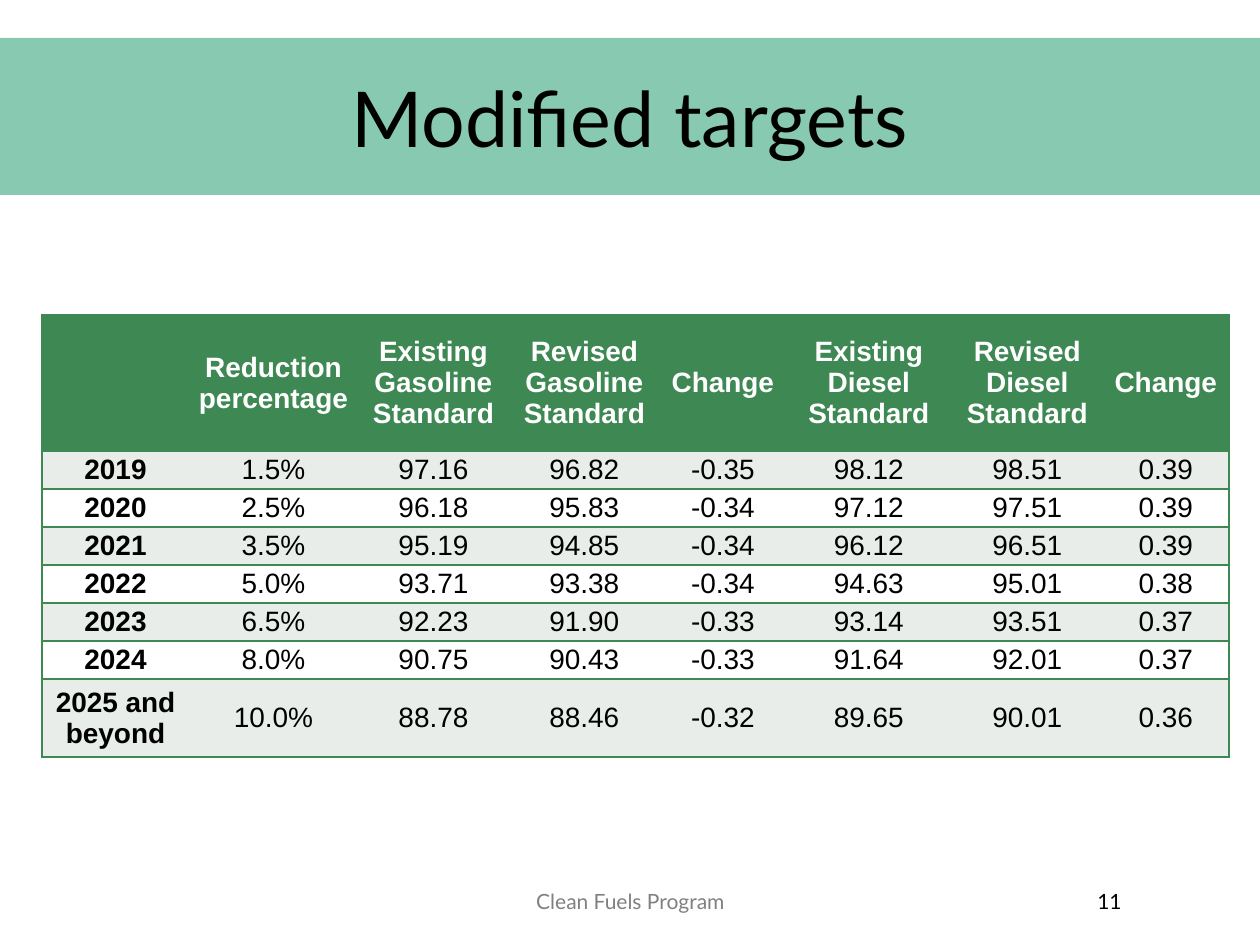
from lxml import etree
from pptx import Presentation
from pptx.dml.color import RGBColor
from pptx.enum.text import MSO_ANCHOR as Anchor, MSO_AUTO_SIZE as AutoSize, PP_ALIGN as Align
from pptx.oxml.ns import qn
from pptx.util import Emu, Pt

BLACK = RGBColor(0x00, 0x00, 0x00)
WHITE = RGBColor(0xFF, 0xFF, 0xFF)
GRAY = RGBColor(0x80, 0x80, 0x80)
MINT = RGBColor(0x88, 0xCA, 0xB1)
GREEN = RGBColor(0x3E, 0x88, 0x53)
PALE = RGBColor(0xE8, 0xED, 0xE9)

PX = 914400 / 126

COLUMN_WIDTHS = [147, 169, 151, 151, 126, 166, 151, 126]
ROW_HEIGHTS = [136] + [38] * 6 + [78]
ROWS = [
    ["", "Reduction percentage", "Existing Gasoline Standard", "Revised Gasoline Standard",
     "Change", "Existing Diesel Standard", "Revised Diesel Standard", "Change"],
    ["2019", "1.5%", "97.16", "96.82", "-0.35", "98.12", "98.51", "0.39"],
    ["2020", "2.5%", "96.18", "95.83", "-0.34", "97.12", "97.51", "0.39"],
    ["2021", "3.5%", "95.19", "94.85", "-0.34", "96.12", "96.51", "0.39"],
    ["2022", "5.0%", "93.71", "93.38", "-0.34", "94.63", "95.01", "0.38"],
    ["2023", "6.5%", "92.23", "91.90", "-0.33", "93.14", "93.51", "0.37"],
    ["2024", "8.0%", "90.75", "90.43", "-0.33", "91.64", "92.01", "0.37"],
    ["2025 and beyond", "10.0%", "88.78", "88.46", "-0.32", "89.65", "90.01", "0.36"],
]


def write(paragraph, text, size, font_name, color, align, bold=False):
    paragraph.alignment = align
    run = paragraph.add_run()
    run.text = text
    run.font.size = Pt(size)
    run.font.name = font_name
    run.font.bold = bold
    run.font.color.rgb = color


def add_borders(cell, is_first, is_last):
    """Rule the cell above and below, and at the sides only on the table's outer edges."""
    properties = cell._tc.get_or_add_tcPr()
    for tag, visible in (("lnL", is_first), ("lnR", is_last), ("lnT", True), ("lnB", True)):
        line = etree.SubElement(properties, qn(f"a:{tag}"), w=str(Pt(1)))
        if visible:
            fill = etree.SubElement(line, qn("a:solidFill"))
            etree.SubElement(fill, qn("a:srgbClr"), val=str(GREEN))
        else:
            etree.SubElement(line, qn("a:noFill"))


presentation = Presentation()
presentation.slide_width = Emu(round(1260 * PX))
presentation.slide_height = Emu(round(945 * PX))
slide = presentation.slides.add_slide(presentation.slide_layouts[5])

# Title band
title = slide.shapes.title
title.left, title.top, title.width, title.height = [
    Emu(round(length * PX)) for length in (0, 38, 1260, 157)]
title.fill.solid()
title.fill.fore_color.rgb = MINT
title.text_frame.auto_size = AutoSize.NONE
title.text_frame.vertical_anchor = Anchor.MIDDLE
write(title.text_frame.paragraphs[0], "Modified targets", 44, "Lato", BLACK, Align.CENTER)

# Table of standards
table_box = [Emu(round(length * PX))
             for length in (42, 315, sum(COLUMN_WIDTHS), sum(ROW_HEIGHTS))]
table = slide.shapes.add_table(len(ROWS), len(COLUMN_WIDTHS), *table_box).table
table.first_row = False
table.horz_banding = False
for column, width in zip(table.columns, COLUMN_WIDTHS):
    column.width = Emu(round(width * PX))
for row, height in zip(table.rows, ROW_HEIGHTS):
    row.height = Emu(round(height * PX))

for row_index, values in enumerate(ROWS):
    is_header = row_index == 0
    row_fill = GREEN if is_header else (PALE if row_index % 2 else WHITE)
    for column_index, value in enumerate(values):
        cell = table.cell(row_index, column_index)
        add_borders(cell, column_index == 0, column_index == len(values) - 1)
        cell.fill.solid()
        cell.fill.fore_color.rgb = row_fill
        cell.vertical_anchor = Anchor.MIDDLE
        cell.margin_left = cell.margin_right = Emu(round(9 * PX))
        cell.margin_top = cell.margin_bottom = 0
        if value:
            paragraph = cell.text_frame.paragraphs[0]
            paragraph.space_after = Pt(6)
            write(paragraph, value, 16, "Arial", WHITE if is_header else BLACK,
                  Align.CENTER, bold=is_header or column_index == 0)

# Footer and slide number
for text, left, width, color, align in (
    ("Clean Fuels Program", 431, 399, GRAY, Align.CENTER),
    ("11", 903, 231, BLACK, Align.RIGHT),
):
    box = [Emu(round(length * PX)) for length in (left, 876, width, 50)]
    text_frame = slide.shapes.add_textbox(*box).text_frame
    text_frame.word_wrap = True
    text_frame.vertical_anchor = Anchor.MIDDLE
    write(text_frame.paragraphs[0], text, 12, "Lato", color, align)

presentation.save("out.pptx")
